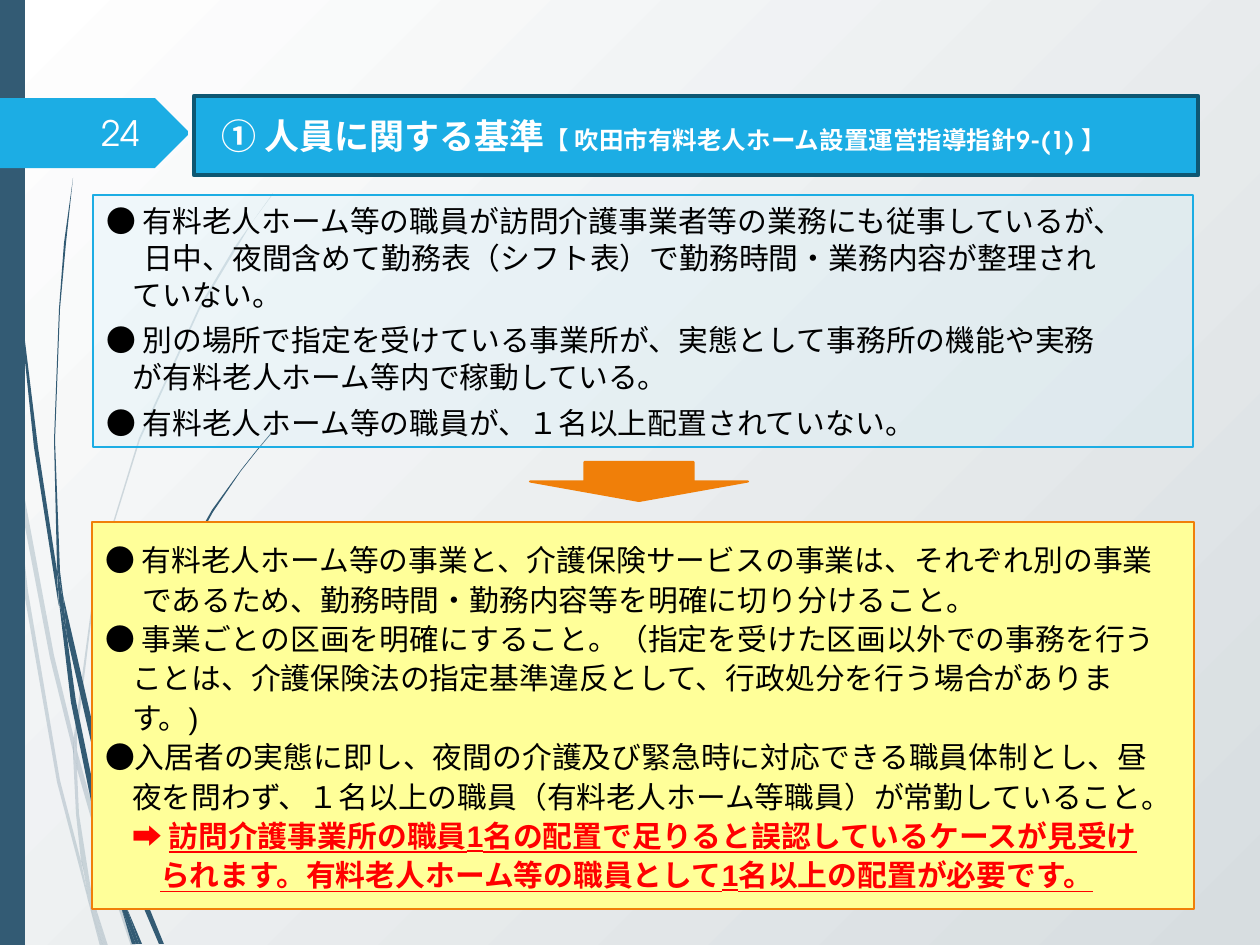
from dataclasses import dataclass

from lxml.etree import SubElement
from pptx import Presentation
from pptx.dml.color import RGBColor
from pptx.enum.shapes import MSO_SHAPE
from pptx.enum.text import MSO_ANCHOR, MSO_AUTO_SIZE, PP_ALIGN
from pptx.oxml.ns import qn
from pptx.util import Pt

EMU_PER_PX = 914400 / 126


def px(length):
    return round(length * EMU_PER_PX)


@dataclass(frozen=True)
class Theme:
    navy: str = "335B74"
    blue: str = "1CADE4"
    deep_blue: str = "0E5772"
    pale_blue: str = "D2EFFA"
    orange: str = "F07F09"
    yellow: str = "FFFF99"
    red: str = "FF0000"
    black: str = "000000"
    white: str = "FFFFFF"
    grey: str = "D7DDE0"
    heading_font: str = "TeX Gyre Adventor"
    body_font: str = "Noto Sans CJK JP"
    advice_font: str = "Arial"
    heading_size: int = 20
    reference_size: int = 14
    body_size: int = 17


def add_text(paragraph, text, font, size, color, bold=False, underline=False):
    run = paragraph.add_run()
    run.text = text
    run.font.name = font
    run.font.size = Pt(size)
    run.font.bold = bold
    run.font.underline = underline
    run.font.color.rgb = RGBColor.from_string(color)
    east_asian = SubElement(run.font._element, qn("a:ea"))
    east_asian.set("typeface", Theme.body_font)


class SlideBuilder:
    def __init__(self, slide, theme):
        self.slide = slide
        self.theme = theme

    def background(self):
        fill = self.slide.background.fill
        fill.gradient()
        fill.gradient_angle = 315
        for stop, color, position in zip(
            fill.gradient_stops, (self.theme.white, self.theme.grey), (0, 1)
        ):
            stop.color.rgb = RGBColor.from_string(color)
            stop.position = position

    def paint(self, shape, fill, line=None, width=1, opacity=100):
        shape.fill.solid()
        shape.fill.fore_color.rgb = RGBColor.from_string(fill)
        if opacity < 100:
            color = shape.element.spPr.find(".//" + qn("a:srgbClr"))
            SubElement(color, qn("a:alpha")).set("val", str(opacity * 1000))
        if line:
            shape.line.color.rgb = RGBColor.from_string(line)
            shape.line.width = Pt(width)
        else:
            shape.line.fill.background()

    def shape(self, kind, box, fill, **style):
        shape = self.slide.shapes.add_shape(kind, *map(px, box))
        shape.shadow.inherit = False
        self.paint(shape, fill, **style)
        return shape

    def outline(self, points, fill, **style):
        builder = self.slide.shapes.build_freeform(*points[0], scale=EMU_PER_PX)
        builder.add_line_segments(points[1:], close=True)
        shape = builder.convert_to_shape()
        shape.shadow.inherit = False
        self.paint(shape, fill, **style)

    def frame(self, shape, left=13):
        frame = shape.text_frame
        frame.word_wrap = True
        frame.auto_size = MSO_AUTO_SIZE.NONE
        frame.vertical_anchor = MSO_ANCHOR.MIDDLE
        frame.margin_left, frame.margin_right = px(left), px(12)
        frame.margin_top = frame.margin_bottom = px(6)
        return frame

    def title(self, box, heading, reference):
        title = self.slide.shapes.title
        title.left, title.top, title.width, title.height = map(px, box)
        properties = title.element.spPr
        properties.find(qn("a:xfrm")).set("flipH", "1")
        geometry = SubElement(properties, qn("a:prstGeom"))
        geometry.set("prst", "homePlate")
        SubElement(geometry, qn("a:avLst"))
        self.paint(title, self.theme.blue, line=self.theme.deep_blue, width=2.5)
        paragraph = self.frame(title, left=27).paragraphs[0]
        paragraph.alignment = PP_ALIGN.LEFT
        for text, size in (
            (heading, self.theme.heading_size),
            (reference, self.theme.reference_size),
        ):
            add_text(paragraph, text, self.theme.heading_font, size, self.theme.white, bold=True)

    def page_number(self, box, number):
        frame = self.frame(self.slide.shapes.add_textbox(*map(px, box)))
        paragraph = frame.paragraphs[0]
        paragraph.alignment = PP_ALIGN.RIGHT
        add_text(paragraph, number, self.theme.heading_font, self.theme.heading_size, self.theme.white)

    def panel(self, box, lines, font, pitch, fill, **style):
        frame = self.frame(self.shape(MSO_SHAPE.RECTANGLE, box, fill, **style))
        for index, (indent, space_after, runs) in enumerate(lines):
            paragraph = frame.add_paragraph() if index else frame.paragraphs[0]
            paragraph.alignment = PP_ALIGN.LEFT
            paragraph.line_spacing = Pt(pitch)
            paragraph.space_after = Pt(space_after)
            properties = paragraph._p.get_or_add_pPr()
            properties.set("marL", str(px(indent)))
            properties.set("indent", "0")
            for text, emphasis in runs:
                add_text(paragraph, text, font, self.theme.body_size, **emphasis)


PALE_WISPS = [
    [(10, 441), (8, 406), (0, 355), (0, 377), (9, 433)],
    [(50, 658), (74, 755), (74, 738), (54, 655), (13, 435), (15, 474)],
    [(81, 765), (77, 751), (77, 769), (107, 874), (131, 946), (136, 946), (111, 872)],
    [(105, 946), (108, 946), (92, 896)],
    [(81, 861), (60, 780), (28, 591), (15, 474), (10, 441), (24, 592), (57, 782), (81, 873), (88, 900), (87, 891)],
    [(73, 755), (76, 814), (81, 861), (84, 872), (92, 896), (91, 890), (79, 814), (77, 769), (77, 766)],
    [(77, 736), (96, 582), (140, 440), (200, 309), (236, 249), (253, 221), (273, 194), (273, 193),
     (253, 221), (234, 248), (199, 307), (139, 438), (95, 581), (74, 736), (74, 738), (77, 751)],
    [(88, 900), (100, 946), (103, 946)],
    [(77, 766), (77, 769), (77, 751), (74, 738), (73, 755)],
    [(84, 872), (82, 861), (87, 891), (88, 900), (103, 946), (105, 946), (92, 896)],
]
DARK_WISPS = [
    [(6, 139), (18, 294), (34, 447), (58, 601), (59, 606), (57, 576), (57, 571), (38, 447),
     (19, 292), (8, 137), (5, 60), (4, 0), (3, 0), (4, 60)],
    [(92, 746), (111, 813), (111, 798), (111, 795), (97, 743), (63, 595), (67, 636)],
    [(118, 818), (115, 808), (115, 827), (137, 892), (159, 944), (164, 944), (142, 890)],
    [(115, 871), (102, 828), (76, 701), (67, 636), (59, 601), (71, 702), (97, 830), (116, 892), (122, 910), (121, 903)],
    [(63, 595), (60, 571), (55, 440), (60, 309), (66, 243), (73, 178), (64, 243), (59, 309), (54, 440), (57, 566), (62, 595)],
    [(139, 944), (142, 944), (126, 906)],
    [(59, 601), (67, 636), (63, 595), (62, 595), (57, 566), (57, 571)],
    [(115, 798), (130, 696), (165, 600), (213, 512), (241, 471), (256, 452), (272, 433), (271, 433),
     (256, 451), (241, 470), (212, 510), (163, 597), (127, 694), (111, 795), (115, 808)],
    [(122, 910), (132, 944), (136, 944)],
    [(111, 813), (115, 871), (121, 890), (126, 906), (126, 902), (115, 827), (113, 820)],
    [(121, 890), (115, 871), (121, 903), (122, 910), (136, 944), (139, 944), (126, 906)],
]
PAGE_TAG = [(0, 98), (155, 98), (188, 131), (188, 135), (155, 168), (0, 168)]

PLAIN = {"color": Theme.black}
ALERT = {"color": Theme.red, "bold": True}
ALERT_UNDERLINED = {**ALERT, "underline": True}

FINDINGS = [
    (0, 0, [("● 有料老人ホーム等の職員が訪問介護事業者等の業務にも従事しているが、", PLAIN)]),
    (37, 0, [("日中、夜間含めて勤務表（シフト表）で勤務時間・業務内容が整理され", PLAIN)]),
    (27, 5, [("ていない。", PLAIN)]),
    (0, 0, [("● 別の場所で指定を受けている事業所が、実態として事務所の機能や実務", PLAIN)]),
    (27, 5, [("が有料老人ホーム等内で稼動している。", PLAIN)]),
    (0, 0, [("● 有料老人ホーム等の職員が、１名以上配置されていない。", PLAIN)]),
]
ADVICE = [
    (0, 0, [("● 有料老人ホーム等の事業と、介護保険サービスの事業は、それぞれ別の事業", PLAIN)]),
    (37, 0, [("であるため、勤務時間・勤務内容等を明確に切り分けること。", PLAIN)]),
    (0, 0, [("● 事業ごとの区画を明確にすること。（指定を受けた区画以外での事務を行う", PLAIN)]),
    (27, 0, [("ことは、介護保険法の指定基準違反として、行政処分を行う場合がありま", PLAIN)]),
    (27, 0, [("す。)", PLAIN)]),
    (0, 0, [("●入居者の実態に即し、夜間の介護及び緊急時に対応できる職員体制とし、昼", PLAIN)]),
    (27, 0, [("夜を問わず、１名以上の職員（有料老人ホーム等職員）が常勤していること。", PLAIN)]),
    (27, 0, [("➡ ", ALERT), ("訪問介護事業所の職員1名の配置で足りると誤認しているケースが見受け", ALERT_UNDERLINED)]),
    (55, 0, [("られます。有料老人ホーム等の職員として1名以上の配置が必要です。", ALERT_UNDERLINED)]),
]


def main():
    theme = Theme()
    presentation = Presentation()
    presentation.slide_width, presentation.slide_height = px(1260), px(945)
    builder = SlideBuilder(presentation.slides.add_slide(presentation.slide_layouts[5]), theme)
    builder.background()
    for wisps, opacity in ((PALE_WISPS, 20), (DARK_WISPS, 100)):
        for points in wisps:
            builder.outline(points, theme.navy, opacity=opacity)
    builder.shape(MSO_SHAPE.RECTANGLE, (0, 0, 25, 945), theme.navy)
    builder.outline(PAGE_TAG, theme.blue)
    builder.page_number((71, 108, 81, 50), "24")
    builder.panel((92, 522, 1102, 387), ADVICE, theme.advice_font, 22.5, theme.yellow, line=theme.orange)
    builder.shape(MSO_SHAPE.DOWN_ARROW, (530, 462, 218, 39), theme.orange, line=theme.orange, width=1.25)
    builder.title((194, 96, 1004, 79), "① 人員に関する基準", "【 吹田市有料老人ホーム設置運営指導指針9-(1) 】")
    builder.panel((93, 195, 1100, 252), FINDINGS, theme.body_font, 21, theme.pale_blue, line=theme.blue, opacity=25)
    presentation.save("out.pptx")


if __name__ == "__main__":
    main()
